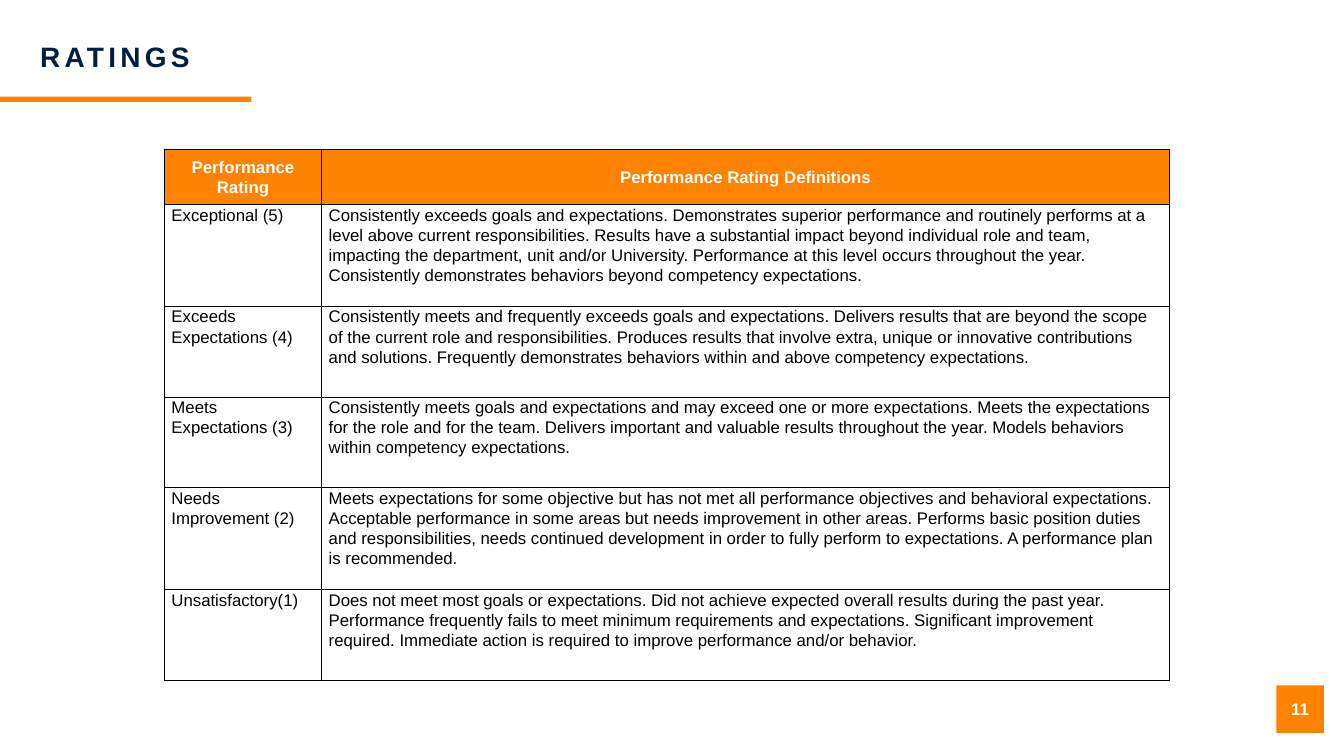
from dataclasses import dataclass

from lxml.etree import SubElement
from pptx import Presentation
from pptx.dml.color import RGBColor
from pptx.enum.shapes import MSO_SHAPE
from pptx.enum.text import MSO_ANCHOR, PP_ALIGN
from pptx.oxml.ns import qn
from pptx.slide import Slide
from pptx.util import Inches, Pt


@dataclass(frozen=True)
class Theme:
    font: str = "Arial"
    orange: str = "FF8200"
    header_orange: str = "FF8300"
    navy: str = "041E42"
    white: str = "FFFFFF"
    black: str = "000000"
    title_size: int = 20
    text_size: int = 12
    title_tracking: int = 3
    title_spacing: float = 0.9
    cell_spacing: float = 1.07
    cell_inset: float = 0.53
    border_width: int = 1


WIDTH, HEIGHT = Inches(13.33), Inches(7.5)


def across(percent):
    return round(WIDTH * percent / 100)


def down(percent):
    return round(HEIGHT * percent / 100)


def area(left, top, width, height):
    return across(left), down(top), across(width), down(height)


@dataclass
class Painter:
    """Draws on one page; all lengths are percentages of the slide."""
    page: Slide
    theme: Theme

    def add_text(self, frame, text, color, size, bold=False,
                 align=PP_ALIGN.LEFT, spacing=1.0, tracking=0):
        frame.word_wrap = True
        para = frame.paragraphs[0]
        para.alignment = align
        para.line_spacing = spacing
        span = para.add_run()
        span.text = text
        span.font.name = self.theme.font
        span.font.size = Pt(size)
        span.font.bold = bold
        span.font.color.rgb = RGBColor.from_string(color)
        if tracking:
            span.font._element.set("spc", str(tracking * 100))

    def block(self, place, color):
        box = self.page.shapes.add_shape(MSO_SHAPE.RECTANGLE, *area(*place))
        box.shadow.inherit = False
        box.fill.solid()
        box.fill.fore_color.rgb = RGBColor.from_string(color)
        box.line.fill.background()
        return box

    def title(self, place, text):
        frame = self.page.shapes.add_textbox(*area(*place)).text_frame
        frame.vertical_anchor = MSO_ANCHOR.MIDDLE
        self.add_text(frame, text, self.theme.navy, self.theme.title_size,
                      True, spacing=self.theme.title_spacing,
                      tracking=self.theme.title_tracking)

    def page_number(self, place, text):
        frame = self.block(place, self.theme.orange).text_frame
        frame.margin_left = frame.margin_right = 0
        frame.vertical_anchor = MSO_ANCHOR.MIDDLE
        self.add_text(frame, text, self.theme.white, self.theme.text_size,
                      True, PP_ALIGN.CENTER)

    def border(self, cell):
        properties = cell._tc.get_or_add_tcPr()
        for side in ("a:lnL", "a:lnR", "a:lnT", "a:lnB"):
            line = SubElement(properties, qn(side),
                              w=str(Pt(self.theme.border_width)))
            fill = SubElement(line, qn("a:solidFill"))
            SubElement(fill, qn("a:srgbClr"), val=self.theme.black)

    def cell(self, cell, text, header_fill=None):
        self.border(cell)
        cell.margin_left = cell.margin_right = across(self.theme.cell_inset)
        cell.margin_top = cell.margin_bottom = 0
        color, align = self.theme.black, PP_ALIGN.LEFT
        cell.vertical_anchor = MSO_ANCHOR.TOP
        if header_fill:
            color, align = self.theme.white, PP_ALIGN.CENTER
            cell.vertical_anchor = MSO_ANCHOR.MIDDLE
            cell.fill.solid()
            cell.fill.fore_color.rgb = RGBColor.from_string(header_fill)
        else:
            cell.fill.background()
        self.add_text(cell.text_frame, text, color, self.theme.text_size,
                      bool(header_fill), align, self.theme.cell_spacing)

    def table(self, left, top, widths, heights, rows, header_fills):
        place = area(left, top, sum(widths), sum(heights))
        table = self.page.shapes.add_table(len(rows), len(widths), *place).table
        table.horz_banding = False
        for column, width in zip(table.columns, widths):
            column.width = across(width)
        for row, height in zip(table.rows, heights):
            row.height = down(height)
        for r, texts in enumerate(rows):
            for c, text in enumerate(texts):
                self.cell(table.cell(r, c), text,
                          header_fills[c] if r == 0 else None)


RATINGS = [
    ("Performance Rating", "Performance Rating Definitions"),
    ("Exceptional (5)",
     "Consistently exceeds goals and expectations. Demonstrates superior "
     "performance and routinely performs at a level above current "
     "responsibilities. Results have a substantial impact beyond individual "
     "role and team, impacting the department, unit and/or University. "
     "Performance at this level occurs throughout the year. Consistently "
     "demonstrates behaviors beyond competency expectations."),
    ("Exceeds Expectations (4)",
     "Consistently meets and frequently exceeds goals and expectations. "
     "Delivers results that are beyond the scope of the current role and "
     "responsibilities. Produces results that involve extra, unique or "
     "innovative contributions and solutions. Frequently demonstrates "
     "behaviors within and above competency expectations."),
    ("Meets Expectations (3)",
     "Consistently meets goals and expectations and may exceed one or more "
     "expectations. Meets the expectations for the role and for the team. "
     "Delivers important and valuable results throughout the year. Models "
     "behaviors within competency expectations."),
    ("Needs Improvement (2)",
     "Meets expectations for some objective but has not met all performance "
     "objectives and behavioral expectations. Acceptable performance in some "
     "areas but needs improvement in other areas. Performs basic position "
     "duties and responsibilities, needs continued development in order to "
     "fully perform to expectations. A performance plan is recommended."),
    ("Unsatisfactory(1)",
     "Does not meet most goals or expectations. Did not achieve expected "
     "overall results during the past year. Performance frequently fails to "
     "meet minimum requirements and expectations. Significant improvement "
     "required. Immediate action is required to improve performance and/or "
     "behavior."),
]


def main():
    deck = Presentation()
    deck.slide_width, deck.slide_height = WIDTH, HEIGHT
    theme = Theme()
    painter = Painter(deck.slides.add_slide(deck.slide_layouts[6]), theme)

    # Heading with its rule
    painter.block((0, 12.8, 18.7, 0.67), theme.orange)
    painter.title((2.25, 4.8, 83.8, 5.87), "RATINGS")

    # Page number
    painter.page_number((94.97, 90.67, 3.53, 6.27), "11")

    # Rating definitions: rows are a header, then tall or short
    header, tall, short = 7.33, 13.47, 12
    painter.table(12.23, 19.73, (11.7, 63.1),
                  (header, tall, short, short, tall, short),
                  RATINGS, (theme.header_orange, theme.orange))

    deck.save("out.pptx")


if __name__ == "__main__":
    main()
